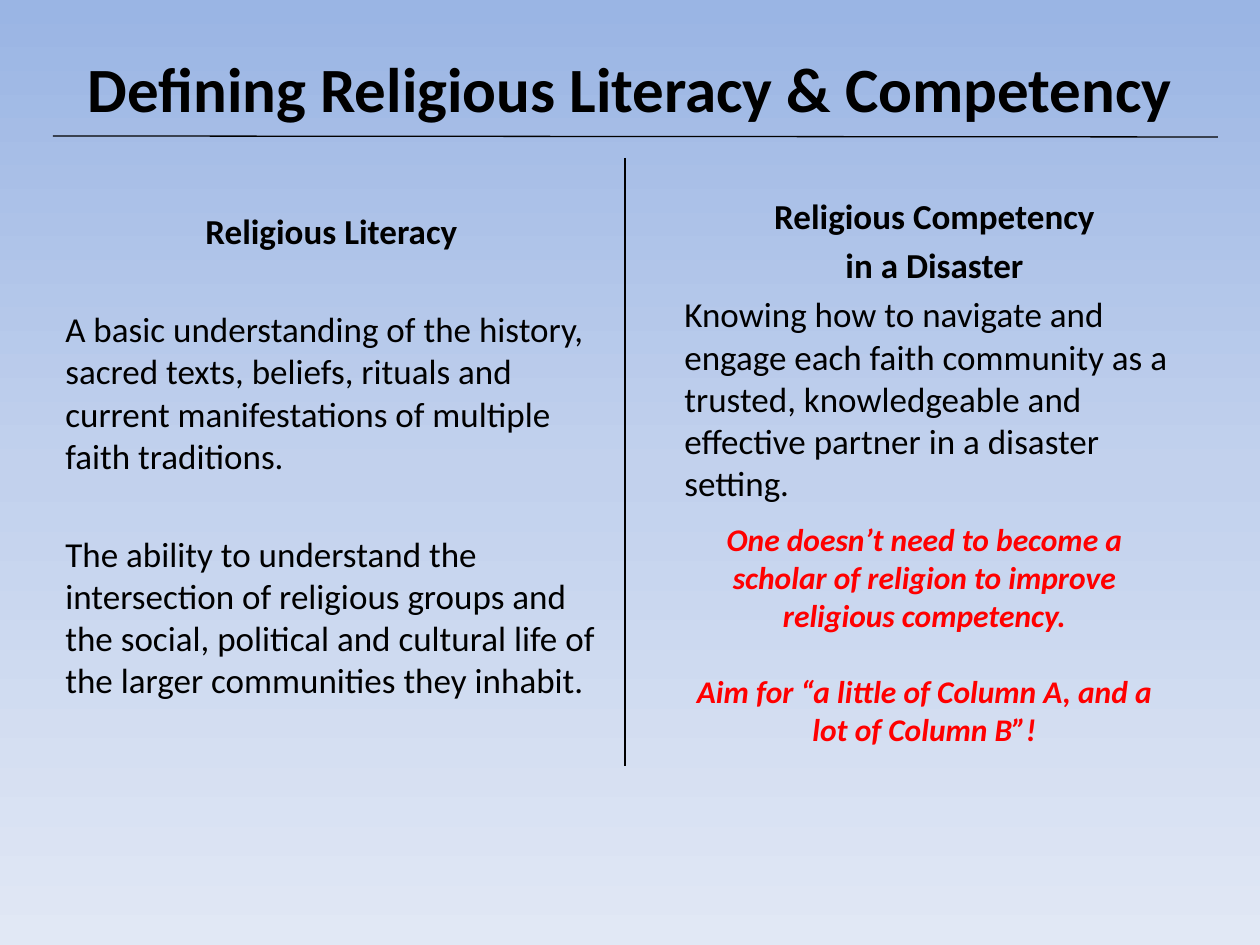
from copy import deepcopy

from lxml import etree
from pptx import Presentation
from pptx.dml.color import RGBColor
from pptx.enum.shapes import MSO_CONNECTOR
from pptx.enum.text import MSO_ANCHOR, PP_ALIGN
from pptx.oxml.ns import qn
from pptx.util import Pt

PX = 914400 / 126
CENTER, LEFT = PP_ALIGN.CENTER, PP_ALIGN.LEFT
TOP, MIDDLE = MSO_ANCHOR.TOP, MSO_ANCHOR.MIDDLE
STRAIGHT = MSO_CONNECTOR.STRAIGHT
BLACK, RED = "000000", "FF0000"
FONT = "Calibri"

# Content
TITLE = "Defining Religious Literacy & Competency"
BACKGROUND = [(0, "9AB5E4"), (0.5, "C2D1ED"), (1, "E1E8F5")]

HEADING = dict(size=20, bold=True, align=CENTER)
BODY = dict(size=20)
NOTE = dict(size=18, bold=True, italic=True, color=RED, align=CENTER)

# Each text block: box in px, top inset in px, paragraphs of
# (text, format, space before in points)
BLOCKS = [
    ((672, 189, 525, 630), 6, [
        ("Religious Competency", HEADING, 0),
        ("in a Disaster", HEADING, 4),
        ("Knowing how to navigate and engage each faith community as a "
         "trusted, knowledgeable and effective partner in a disaster setting.",
         BODY, 4),
    ]),
    ((53, 158, 557, 630), 52, [
        ("Religious Literacy", HEADING, 0),
        ("A basic understanding of the history, sacred texts, beliefs, rituals "
         "and current manifestations of multiple faith traditions.", BODY, 32),
        ("The ability to understand the intersection of religious groups and "
         "the social, political and cultural life of the larger communities "
         "they inhabit.", BODY, 32),
    ]),
    ((683, 514, 483, 242), 6, [
        ("One doesn’t need to become a scholar of religion to improve "
         "religious competency.", NOTE, 0),
        ("Aim for “a little of Column A, and a lot of Column B”!", NOTE, 22),
    ]),
]

# Column divider and title rule: start x, start y, end x, end y in px
RULES = [(625, 158, 625, 766), (53, 136, 1218, 137)]


def emu(*lengths):
    return [round(length * PX) for length in lengths]


def rgb(color):
    return RGBColor.from_string(color)


def write(paragraph, text, size=20, bold=False, italic=False, color=BLACK,
          align=LEFT, before=0):
    paragraph.alignment = align
    paragraph.space_before = Pt(before)
    run = paragraph.add_run()
    run.text = text
    font = run.font
    font.name, font.size, font.bold, font.italic = FONT, Pt(size), bold, italic
    font.color.rgb = rgb(color)


def paint_background(slide, stops):
    fill = slide.background.fill
    fill.gradient()
    fill.gradient_angle = 270
    stop_list = next(slide.element.iter(qn("a:gsLst")))
    while len(stop_list) < len(stops):
        stop_list.append(deepcopy(stop_list[0]))
    for stop, (position, color) in zip(fill.gradient_stops, stops):
        stop.position = position
        stop.color.rgb = rgb(color)


def add_block(slide, box, inset, paragraphs):
    frame = slide.shapes.add_textbox(*emu(*box)).text_frame
    frame.word_wrap = True
    frame.vertical_anchor = TOP
    frame.margin_top = emu(inset)[0]
    for i, (text, style, before) in enumerate(paragraphs):
        paragraph = frame.add_paragraph() if i else frame.paragraphs[0]
        write(paragraph, text, before=before, **style)


def add_rule(slide, ends):
    rule = slide.shapes.add_connector(STRAIGHT, *emu(*ends))
    rule.line.color.rgb = rgb(BLACK)
    rule.line.width = Pt(0.75)
    etree.SubElement(rule._element.spPr, qn("a:effectLst"))


def main():
    deck = Presentation()
    deck.slide_width, deck.slide_height = emu(1260, 945)
    slide = deck.slides.add_slide(deck.slide_layouts[5])
    paint_background(slide, BACKGROUND)

    # Title
    title = slide.shapes.title
    title.left, title.top, title.width, title.height = emu(63, 38, 1134, 98)
    title.text_frame.vertical_anchor = MIDDLE
    write(title.text_frame.paragraphs[0], TITLE, size=36, bold=True, align=CENTER)

    # Columns and note
    for block in BLOCKS:
        add_block(slide, *block)

    # Lines
    for ends in RULES:
        add_rule(slide, ends)

    deck.save("out.pptx")


if __name__ == "__main__":
    main()
